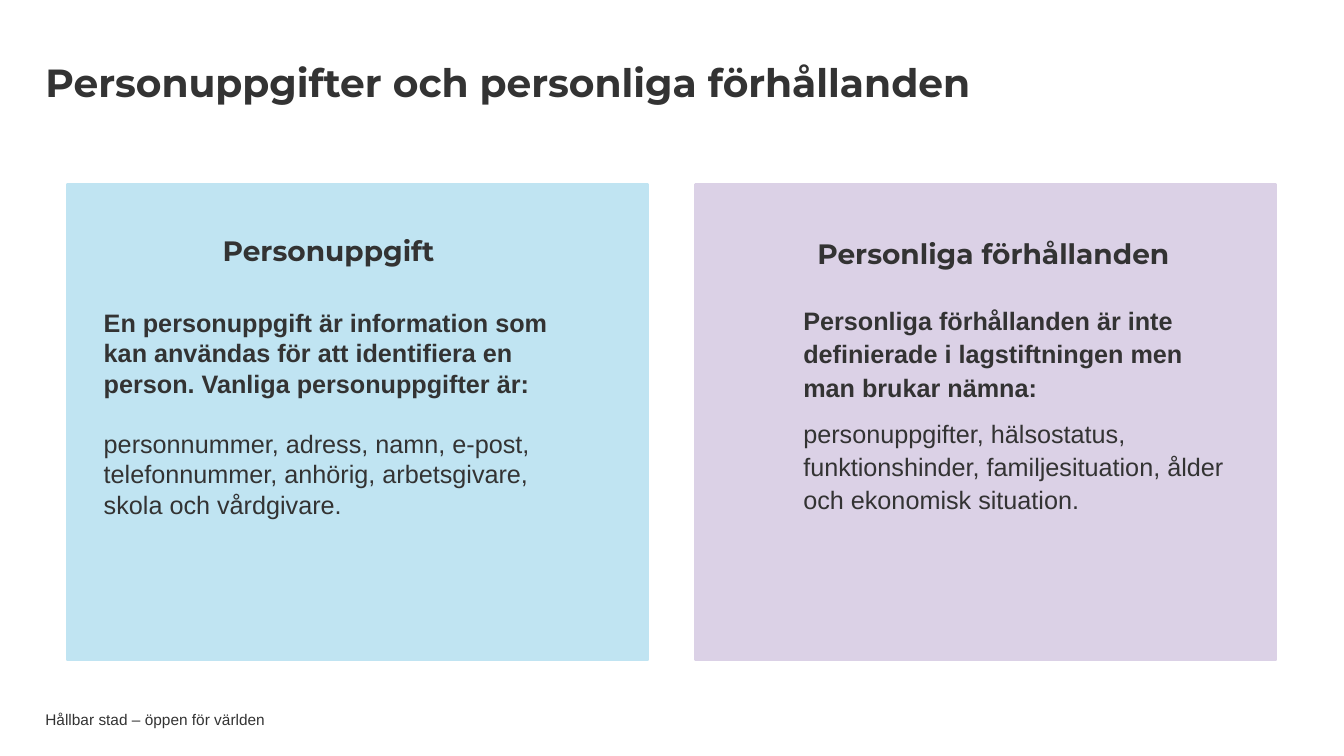
from dataclasses import dataclass

from pptx import Presentation
from pptx.dml.color import RGBColor
from pptx.enum.shapes import MSO_SHAPE
from pptx.enum.text import MSO_ANCHOR, MSO_AUTO_SIZE, PP_ALIGN
from pptx.oxml.xmlchemy import OxmlElement
from pptx.shapes.autoshape import Shape
from pptx.slide import Slide
from pptx.util import Pt


@dataclass(frozen=True)
class Theme:
    ink: RGBColor = RGBColor(0x33, 0x33, 0x33)
    blue: RGBColor = RGBColor(0xC0, 0xE4, 0xF2)
    lilac: RGBColor = RGBColor(0xDB, 0xD1, 0xE6)
    head: str = "Montserrat"
    text: str = "Arial"
    title: int = 28
    label: int = 20
    body: int = 18
    foot: int = 11


@dataclass(frozen=True)
class Box:
    left: float
    top: float
    width: float
    height: float


@dataclass(frozen=True)
class Panel:
    box: Box
    fill: RGBColor


@dataclass(frozen=True)
class Label:
    box: Box
    text: str


THEME = Theme()
PANELS = [
    Panel(Box(496.8, 131.8, 414.7, 339.8), THEME.lilac),
    Panel(Box(48.2, 131.8, 414.7, 339.8), THEME.blue),
]
LABELS = [
    Label(Box(151.9, 163.4, 169.2, 31.7), "Personuppgift"),
    Label(Box(576.7, 165.6, 279.4, 31.7), "Personliga förhållanden"),
]
DATA = [
    "En personuppgift är information som kan användas för att identifiera en "
    "person. Vanliga personuppgifter är:",
    "personnummer, adress, namn, e-post, telefonnummer, anhörig, "
    "arbetsgivare, skola och vårdgivare.",
]
TRAITS = [
    "Personliga förhållanden är inte definierade i lagstiftningen men man "
    "brukar nämna:",
    "personuppgifter, hälsostatus, funktionshinder, familjesituation, ålder "
    "och ekonomisk situation.",
]


def place(shape: Shape, box: Box) -> None:
    shape.left, shape.top = Pt(box.left), Pt(box.top)
    shape.width, shape.height = Pt(box.width), Pt(box.height)


def write(shape: Shape, lines: list[str], *, font: str, size: int,
          bold: tuple[bool, ...] = (True,), gap: float = 0, after: float = 0,
          pitch: float = 1.0, side: float = 7.2, edge: float = 3.6,
          anchor: MSO_ANCHOR = MSO_ANCHOR.TOP) -> None:
    frame = shape.text_frame
    frame.word_wrap = True
    frame.auto_size = MSO_AUTO_SIZE.NONE
    frame.vertical_anchor = anchor
    frame.margin_left = frame.margin_right = Pt(side)
    frame.margin_top = frame.margin_bottom = Pt(edge)
    for rank, (line, heavy) in enumerate(zip(lines, bold)):
        para = frame.add_paragraph() if rank else frame.paragraphs[0]
        props = para._p.get_or_add_pPr()
        props.set("marL", "0")
        props.set("indent", "0")
        props.append(OxmlElement("a:buNone"))
        para.alignment = PP_ALIGN.LEFT
        para.line_spacing = pitch
        para.space_before = Pt(gap if rank else 0)
        para.space_after = Pt(after)
        run = para.add_run()
        run.text = line
        run.font.name, run.font.size = font, Pt(size)
        run.font.bold = heavy
        run.font.color.rgb = THEME.ink


def add_text(slide: Slide, box: Box) -> Shape:
    return slide.shapes.add_textbox(
        Pt(box.left), Pt(box.top), Pt(box.width), Pt(box.height))


def add_panel(slide: Slide, panel: Panel) -> None:
    box = panel.box
    shape = slide.shapes.add_shape(
        MSO_SHAPE.RECTANGLE, Pt(box.left), Pt(box.top), Pt(box.width), Pt(box.height))
    shape.shadow.inherit = False
    shape.fill.solid()
    shape.fill.fore_color.rgb = panel.fill
    shape.line.color.rgb = panel.fill
    shape.line.width = Pt(1.5)


def main() -> None:
    deck = Presentation()
    deck.slide_width, deck.slide_height = Pt(960), Pt(540)
    slide = deck.slides.add_slide(deck.slide_layouts[1])
    title, body = slide.placeholders

    foot = add_text(slide, Box(32.4, 508.3, 680.4, 11.5))
    write(foot, ["Hållbar stad – öppen för världen"], font=THEME.text,
          size=THEME.foot, bold=(False,), side=0, edge=0, anchor=MSO_ANCHOR.MIDDLE)

    for panel in PANELS:
        add_panel(slide, panel)
    for holder in (title, body):
        slide.shapes.element.append(holder.element)

    place(title, Box(32.4, 31.7, 722.2, 58.3))
    write(title, ["Personuppgifter och personliga förhållanden"], font=THEME.head,
          size=THEME.title, pitch=0.9, side=0, anchor=MSO_ANCHOR.MIDDLE)

    place(body, Box(573.8, 216, 300.2, 172.1))
    write(body, TRAITS, font=THEME.text, size=THEME.body, bold=(True, False),
          gap=6, after=3, pitch=1.1, side=0, edge=0)

    write(add_text(slide, Box(67, 216, 339.1, 159.8)), DATA, font=THEME.text,
          size=THEME.body, bold=(True, False), gap=21.6)
    for label in LABELS:
        write(add_text(slide, label.box), [label.text], font=THEME.head,
              size=THEME.label)

    deck.save("out.pptx")


if __name__ == "__main__":
    main()
